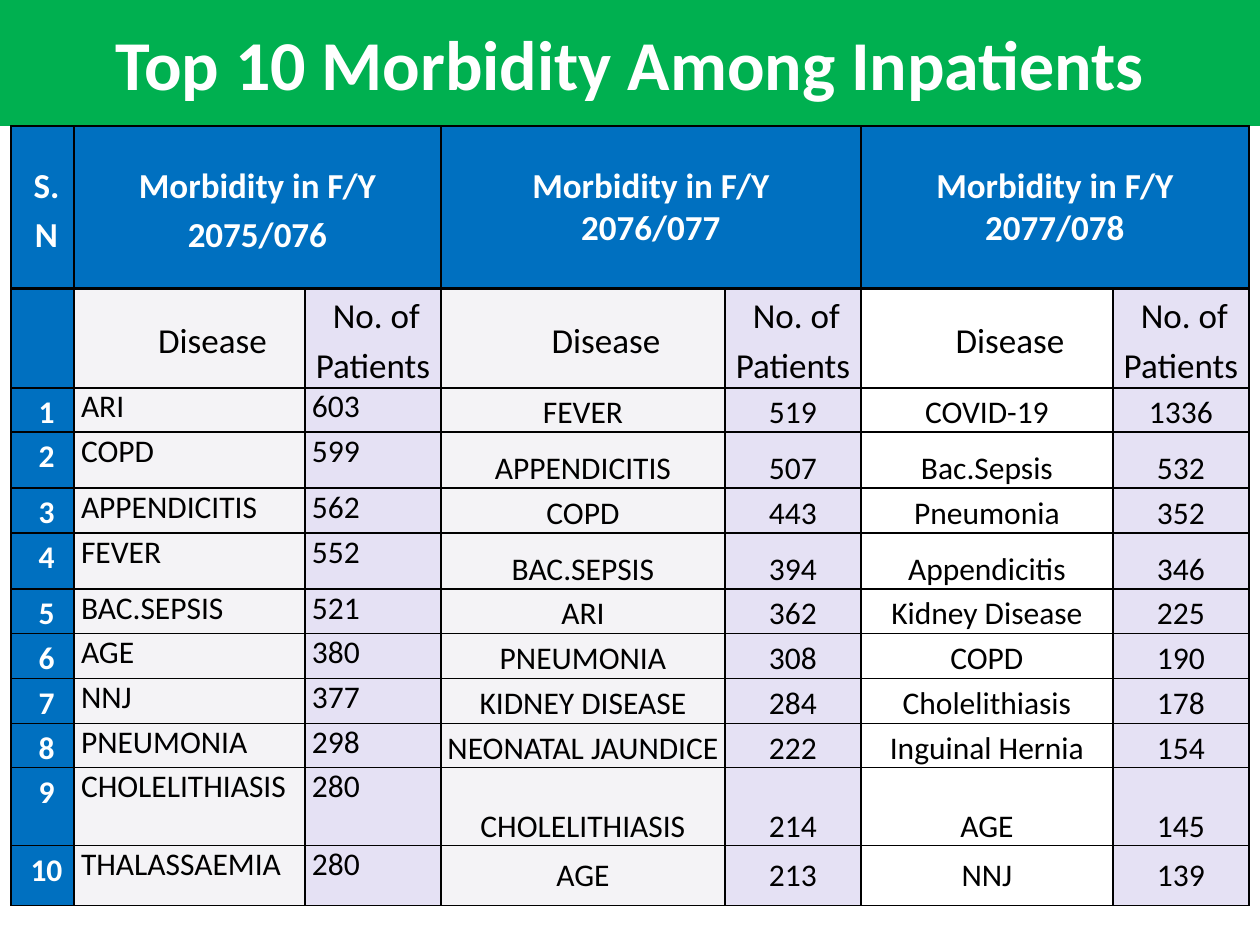
from dataclasses import dataclass
from typing import NamedTuple

from lxml import etree
from pptx import Presentation, util as u
from pptx.dml.color import RGBColor
from pptx.enum import text
from pptx.oxml.ns import qn

SCALE = 914400 / 126  # EMU per px
COLORS = {
    "title": "00B050", "header": "0070C0", "disease": "F4F3F6",
    "count": "E5E1F4", "white": "FFFFFF", "black": "000000",
}
CENTER, LEFT = text.PP_ALIGN.CENTER, text.PP_ALIGN.LEFT
TOP, MIDDLE, BOTTOM = (text.MSO_ANCHOR.TOP, text.MSO_ANCHOR.MIDDLE,
                       text.MSO_ANCHOR.BOTTOM)


class Case(NamedTuple):
    disease: str
    patients: int


@dataclass
class Year:
    heading: list[str]
    disease_fill: str
    spacing: float
    cases: list[Case]


YEARS = [
    Year(["Morbidity in F/Y 2075/076"], "disease", 1.15, [
        Case("ARI", 603), Case("COPD", 599), Case("APPENDICITIS", 562),
        Case("FEVER", 552), Case("BAC.SEPSIS", 521), Case("AGE", 380),
        Case("NNJ", 377), Case("PNEUMONIA", 298),
        Case("CHOLELITHIASIS", 280), Case("THALASSAEMIA", 280)]),
    Year(["Morbidity in F/Y", "2076/077"], "disease", 1.0, [
        Case("FEVER", 519), Case("APPENDICITIS", 507), Case("COPD", 443),
        Case("BAC.SEPSIS", 394), Case("ARI", 362), Case("PNEUMONIA", 308),
        Case("KIDNEY DISEASE", 284), Case("NEONATAL JAUNDICE", 222),
        Case("CHOLELITHIASIS", 214), Case("AGE", 213)]),
    Year(["Morbidity in F/Y", "2077/078"], "white", 1.0, [
        Case("COVID-19", 1336), Case("Bac.Sepsis", 532),
        Case("Pneumonia", 352), Case("Appendicitis", 346),
        Case("Kidney Disease", 225), Case("COPD", 190),
        Case("Cholelithiasis", 178), Case("Inguinal Hernia", 154),
        Case("AGE", 145), Case("NNJ", 139)]),
]
COLUMN_WIDTHS = [63, 231, 136, 284, 136, 252, 136]
ROW_HEIGHTS = [163, 99, 44, 56, 45, 56, 44, 45, 45, 44, 78, 60]


def px(length: int) -> u.Emu:
    return u.Emu(round(length * SCALE))


def rgb(name: str) -> RGBColor:
    return RGBColor.from_string(COLORS[name])


def write(frame, lines: list[str], *, size: int = 18, color: str = "black",
          bold: bool = False, align=CENTER, spacing: float = 1.0,
          indents: tuple[int, ...] = ()) -> None:
    """Fill a text frame, one paragraph per line."""
    for index, line in enumerate(lines):
        paragraph = frame.paragraphs[0] if index == 0 else frame.add_paragraph()
        if indents:
            properties = paragraph._p.get_or_add_pPr()
            properties.set("marL", str(px(indents[index])))
            properties.set("indent", "0")
        paragraph.alignment = align
        paragraph.line_spacing = spacing
        run = paragraph.add_run()
        run.text = line
        run.font.name = "Calibri"
        run.font.size = u.Pt(size)
        run.font.bold = bold
        run.font.color.rgb = rgb(color)


def set_borders(cell, row: int) -> None:
    """Black lines all round, thicker below the heading row."""
    widths = {"a:lnL": 1, "a:lnR": 1, "a:lnT": 2 if row == 1 else 1,
              "a:lnB": 2 if row == 0 else 1}
    properties = cell._tc.get_or_add_tcPr()
    for position, (tag, width) in enumerate(widths.items()):
        line = etree.Element(qn(tag), w=str(u.Pt(width)))
        fill = etree.SubElement(line, qn("a:solidFill"))
        etree.SubElement(fill, qn("a:srgbClr"), val=COLORS["black"])
        properties.insert(position, line)


def fill_cell(cell, lines: list[str], fill: str, *, anchor=MIDDLE,
              margins: tuple[int, int, int, int] = (7, 0, 7, 0),
              **text_format) -> None:
    cell.fill.solid()
    cell.fill.fore_color.rgb = rgb(fill)
    cell.vertical_anchor = anchor
    (cell.margin_left, cell.margin_top,
     cell.margin_right, cell.margin_bottom) = map(px, margins)
    write(cell.text_frame, lines, **text_format)


def fill_year(table, column: int, year: Year) -> None:
    """Draw one fiscal year: heading, subheadings and ten cases."""
    heading = table.cell(0, column)
    heading.merge(table.cell(0, column + 1))
    fill_cell(heading, year.heading, "header", size=20, color="white",
              bold=True, spacing=year.spacing)
    fill_cell(table.cell(1, column), ["Disease"], year.disease_fill,
              size=20, spacing=1.15, indents=(46,))
    fill_cell(table.cell(1, column + 1), ["No. of", "Patients"], "count",
              size=20, spacing=1.15, indents=(7, 0))

    first_year = year is YEARS[0]
    for row, case in enumerate(year.cases, start=2):
        if first_year:
            style = dict(align=LEFT, anchor=TOP)
        else:
            last = row == len(ROW_HEIGHTS) - 1
            style = dict(anchor=MIDDLE if last else BOTTOM,
                         margins=(1, 1, 1, 0))
        fill_cell(table.cell(row, column), [case.disease],
                  year.disease_fill, **style)
        fill_cell(table.cell(row, column + 1), [str(case.patients)],
                  "count", **style)


def add_morbidity_table(slide) -> None:
    table = slide.shapes.add_table(
        len(ROW_HEIGHTS), len(COLUMN_WIDTHS), px(11), px(126),
        px(sum(COLUMN_WIDTHS)), px(sum(ROW_HEIGHTS))).table
    table.first_row = table.horz_banding = False
    for column, width in zip(table.columns, COLUMN_WIDTHS):
        column.width = px(width)
    for row, height in zip(table.rows, ROW_HEIGHTS):
        row.height = px(height)

    # Serial numbers
    serial = dict(color="white", bold=True, spacing=1.15, indents=(8,))
    fill_cell(table.cell(0, 0), ["S.N"], "header", size=20, **serial)
    fill_cell(table.cell(1, 0), [], "header")
    for number in range(1, 11):
        fill_cell(table.cell(number + 1, 0), [str(number)], "header",
                  anchor=TOP, **serial)

    # Fiscal years, two columns each
    for index, year in enumerate(YEARS):
        fill_year(table, 1 + 2 * index, year)

    for row in range(len(ROW_HEIGHTS)):
        for column in range(len(COLUMN_WIDTHS)):
            set_borders(table.cell(row, column), row)


def add_title(slide) -> None:
    title = slide.shapes.title
    title.left, title.top, title.width, title.height = map(
        px, (0, 0, 1260, 126))
    title.fill.solid()
    title.fill.fore_color.rgb = rgb("title")
    title.text_frame.vertical_anchor = MIDDLE
    write(title.text_frame, ["Top 10 Morbidity Among Inpatients"],
          size=40, color="white", bold=True)


def main() -> None:
    presentation = Presentation()
    presentation.slide_width, presentation.slide_height = px(1260), px(945)
    slide = presentation.slides.add_slide(presentation.slide_layouts[5])
    add_title(slide)
    add_morbidity_table(slide)
    presentation.save("out.pptx")


if __name__ == "__main__":
    main()
